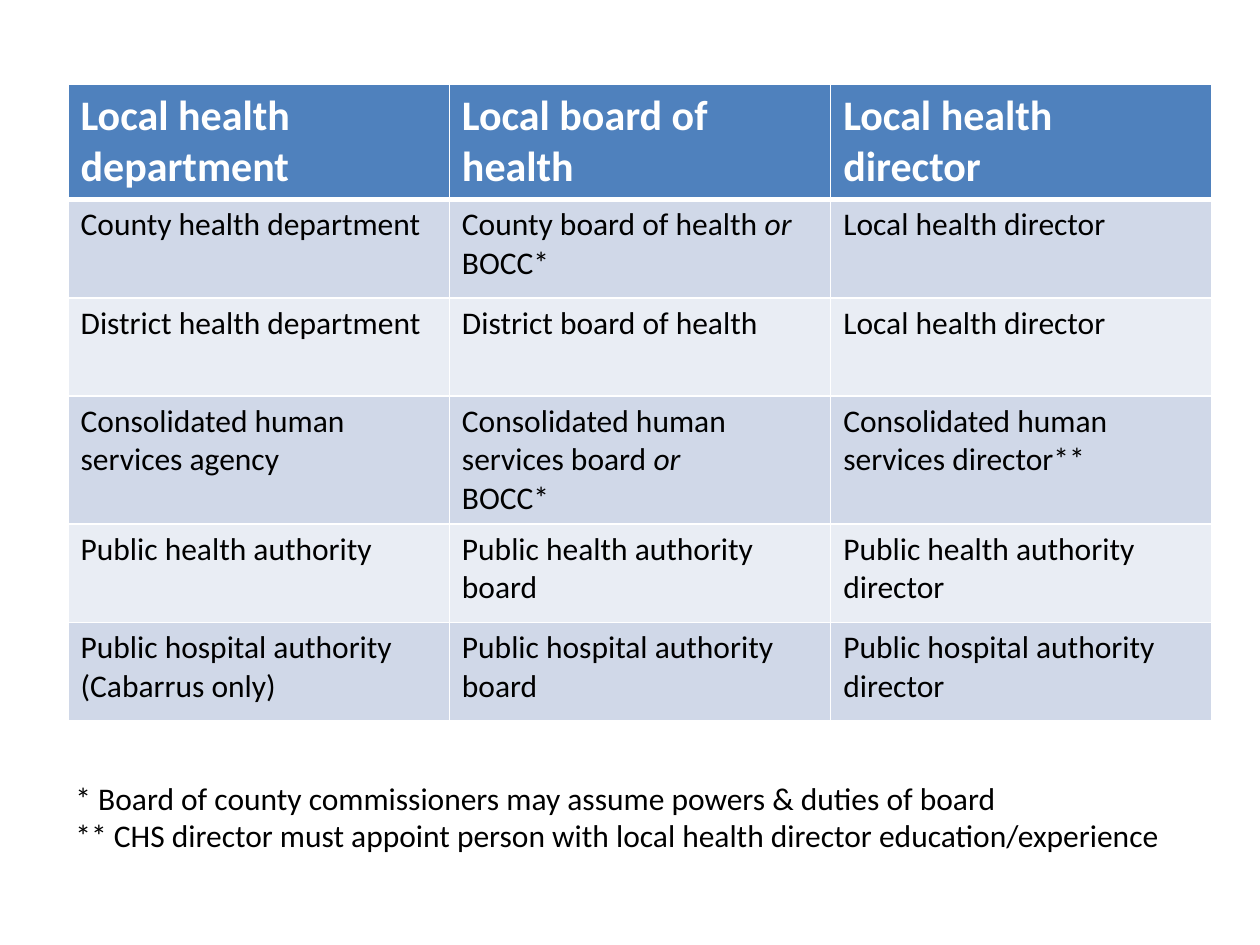
from lxml import etree
from pptx import Presentation
from pptx import util as u
from pptx.dml.color import RGBColor
from pptx.oxml import ns

HEADINGS = ["Local health department", "Local board of health", "Local health director"]
OR = "or"
BODY = [
    ["County health department", ("County board of health ", "BOCC*"), "Local health director"],
    ["District health department", "District board of health", "Local health director"],
    ["Consolidated human services agency", ("Consolidated human services board ", "BOCC*"),
     "Consolidated human services director**"],
    ["Public health authority", "Public health authority board", "Public health authority director"],
    ["Public hospital authority (Cabarrus only)", "Public hospital authority board",
     "Public hospital authority director"],
]
NOTES = [
    "* Board of county commissioners may assume powers & duties of board",
    "** CHS director must appoint person with local health director education/experience",
]
ROW_HEIGHTS = [0.9, 0.78, 0.78, 1.01, 0.78, 0.78]
LEFT, TOP, WIDTH = 0.54, 0.67, 9.08
HEADER_FILL, BAND_FILLS = "4F81BD", ["D0D8E8", "E9EDF4"]
WHITE, BLACK = "FFFFFF", "000000"


def color(value):
    """Turn a hex string into a colour."""
    return RGBColor.from_string(value)


def format_font(para, size, hue, bold=False):
    """Set the shared font of a paragraph."""
    font = para.font
    font.name, font.size, font.bold = "Calibri", u.Pt(size), bold
    font.color.rgb = color(hue)


def add_borders(cell, bottom):
    """Draw white borders, with the given width below the cell."""
    properties = cell._tc.get_or_add_tcPr()
    for side, width in (("L", 1), ("R", 1), ("T", 1), ("B", bottom)):
        line = etree.SubElement(properties, ns.qn(f"a:ln{side}"), w=str(u.Pt(width)))
        fill = etree.SubElement(line, ns.qn("a:solidFill"))
        etree.SubElement(fill, ns.qn("a:srgbClr"), val=WHITE)


def fill_cell(cell, content, is_header, fill):
    """Write and format one table cell."""
    frame = cell.text_frame
    if isinstance(content, tuple):
        board, alternative = content
        frame.text = board
        span = frame.paragraphs[0].add_run()
        span.text, span.font.italic = OR, True
        frame.add_paragraph().text = alternative
    else:
        frame.text = content
    for para in frame.paragraphs:
        format_font(para, 24 if is_header else 18, WHITE if is_header else BLACK, is_header)
    add_borders(cell, 3 if is_header else 1)
    cell.fill.solid()
    cell.fill.fore_color.rgb = color(fill)


def add_comparison(page):
    """Add the table of agencies, boards and directors."""
    rows = [HEADINGS] + BODY
    table = page.shapes.add_table(
        len(rows), len(HEADINGS), u.Inches(LEFT), u.Inches(TOP),
        u.Inches(WIDTH), u.Inches(sum(ROW_HEIGHTS))).table
    for column in table.columns:
        column.width = u.Inches(WIDTH / len(HEADINGS))
    for index, (row, height) in enumerate(zip(rows, ROW_HEIGHTS)):
        table.rows[index].height = u.Inches(height)
        fill = BAND_FILLS[(index - 1) % 2] if index else HEADER_FILL
        for position, content in enumerate(row):
            fill_cell(table.cell(index, position), content, index == 0, fill)


def add_notes(page):
    """Add the footnotes below the table."""
    box = page.shapes.add_textbox(u.Inches(0.5), u.Inches(6.13), u.Inches(9.12), u.Inches(0.71))
    box.text_frame.text = "\n".join(NOTES)
    for para in box.text_frame.paragraphs:
        format_font(para, 18, BLACK)


def main():
    """Build and save the deck."""
    deck = Presentation()
    deck.slide_width, deck.slide_height = u.Inches(10), u.Inches(7.5)
    page = deck.slides.add_slide(deck.slide_layouts[6])
    add_comparison(page)
    add_notes(page)
    deck.save("out.pptx")


if __name__ == "__main__":
    main()
